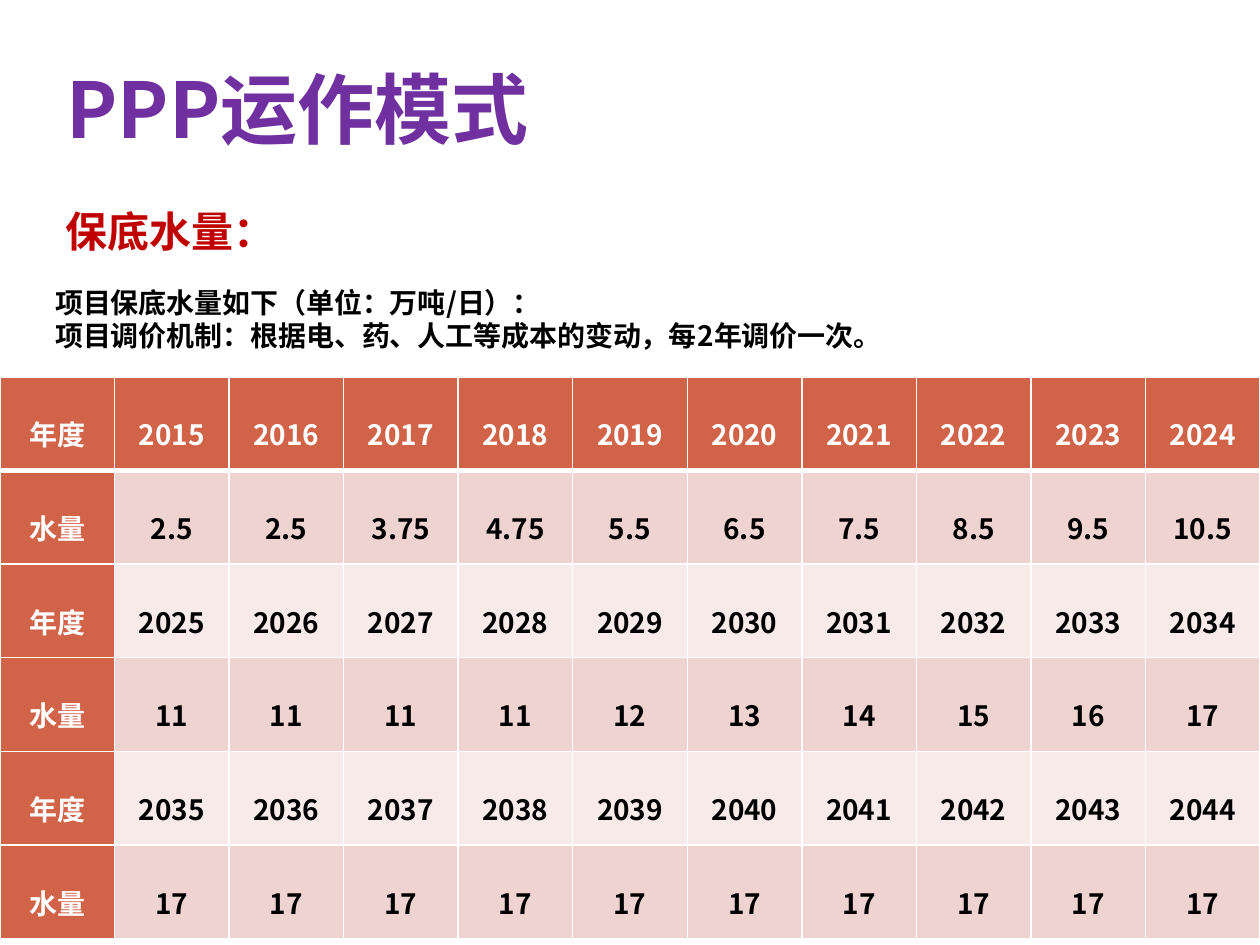
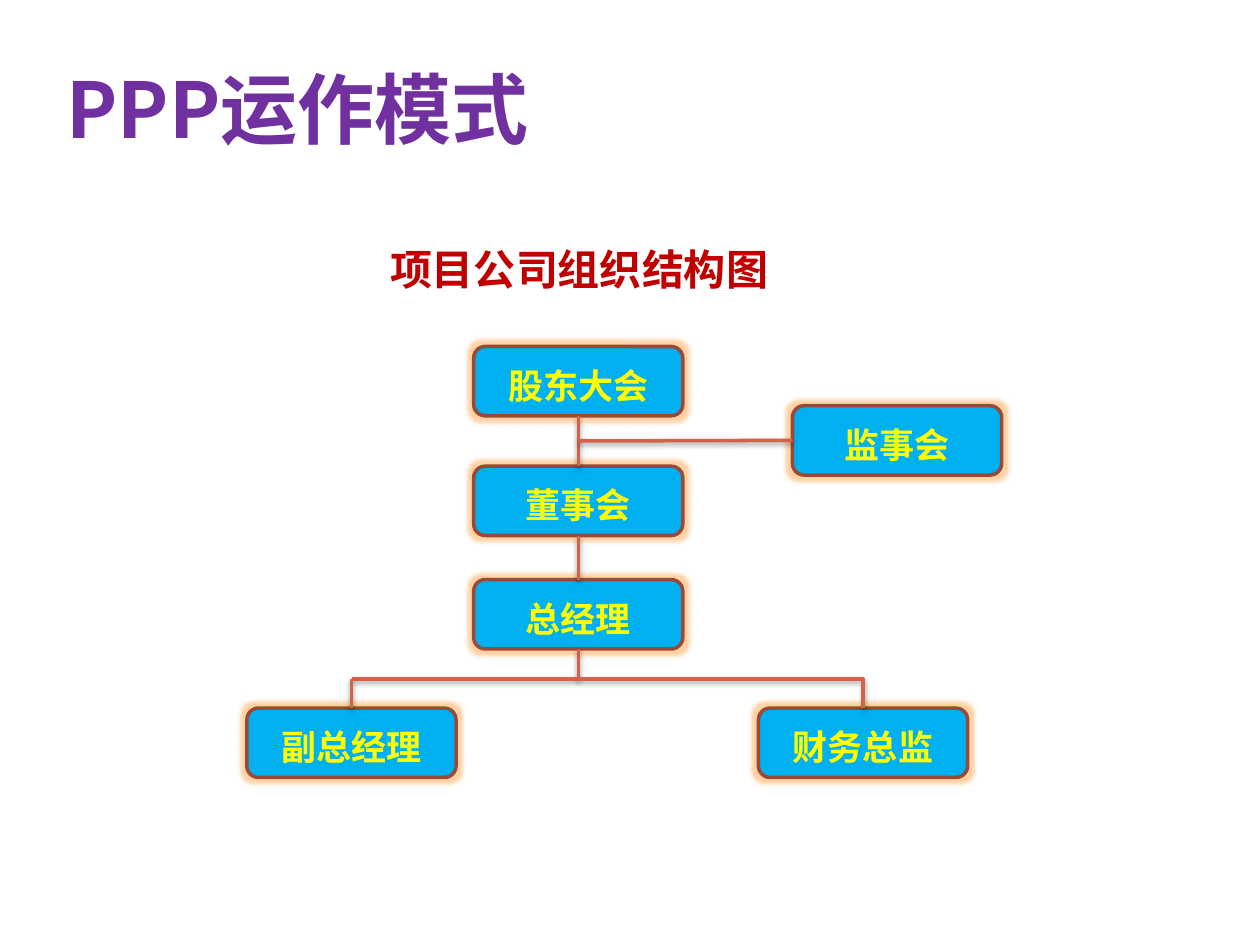
import pptx
import pptx.util
import pptx.dml.color
import pptx.enum.shapes
import pptx.enum.text
import pptx.oxml.ns
from lxml import etree

Inches, Pt = pptx.util.Inches, pptx.util.Pt
qn = pptx.oxml.ns.qn
ALIGN = pptx.enum.text.PP_ALIGN
ANCHOR = pptx.enum.text.MSO_ANCHOR
LINK = pptx.enum.shapes.MSO_CONNECTOR

FONT = "Noto Sans CJK SC"
PURPLE, RED, YELLOW = "7030A0", "C00000", "FFFF00"
WHITE, BLACK = "FFFFFF", "000000"
BRICK, BROWN, SKY, GLOW = "D16349", "9B4936", "00B0F0", "FF9933"
BANDS = ["EED3D0", "F7EAE9"]

TITLE = "PPP运作模式"
NOTES = ["项目保底水量如下（单位：万吨/日）：",
         "项目调价机制：根据电、药、人工等成本的变动，每2年调价一次。"]
FLOWS = [
    (2015, [2.5, 2.5, 3.75, 4.75, 5.5, 6.5, 7.5, 8.5, 9.5, 10.5]),
    (2025, [11, 11, 11, 11, 12, 13, 14, 15, 16, 17]),
    (2035, [17] * 10),
]
TABLE = (0, 2.99, 10, 4.46)

BOX = (1.66, 0.55)
ROLES = {
    "股东大会": (3.76, 2.75),
    "董事会": (3.76, 3.7),
    "总经理": (3.76, 4.6),
    "监事会": (6.29, 3.22),
    "副总经理": (1.96, 5.62),
    "财务总监": (6.02, 5.62),
}
MID = 4.59
FORK = 5.39
TOP, LEFT, BOTTOM = 0, 1, 2


def tint(code):
    return pptx.dml.color.RGBColor.from_string(code)


def write(para, text, size, color):
    run = para.add_run()
    run.text = text
    font = run.font
    font.size, font.bold = Pt(size), True
    font.color.rgb = tint(color)
    font.name = FONT
    etree.SubElement(font._element, qn("a:ea"), typeface=FONT)


def label(slide, at, lines, size, color, align=ALIGN.LEFT, indent=0):
    frame = slide.shapes.add_textbox(*map(Inches, at)).text_frame
    frame.word_wrap = True
    for i, text in enumerate(lines):
        para = frame.add_paragraph() if i else frame.paragraphs[0]
        para.alignment = align
        if indent:
            para._p.get_or_add_pPr().set("indent", str(Inches(indent)))
        write(para, text, size, color)
    return frame


def start(deck):
    """Add a blank slide with the shared title."""
    slide = deck.slides.add_slide(deck.slide_layouts[6])
    label(slide, (0.43, 0.44, 4.09, 0.84), [TITLE], 44, PURPLE)
    return slide


def effect(holder, tag, color, alpha, **attrs):
    """Add a glow or shadow to an effect list."""
    node = etree.SubElement(holder, qn(tag), **attrs)
    shade = etree.SubElement(node, qn("a:srgbClr"), val=color)
    etree.SubElement(shade, qn("a:alpha"), val=str(alpha * 1000))


def border(cell, side, width):
    props = cell._tc.get_or_add_tcPr()
    line = etree.Element(qn("a:ln" + side), w=str(Pt(width)))
    fill = etree.SubElement(line, qn("a:solidFill"))
    etree.SubElement(fill, qn("a:srgbClr"), val=WHITE)
    props.append(line)


def paint(cell, text, row, col):
    head = row == 0 or col == 0
    cell.margin_left = cell.margin_right = Inches(0.07)
    cell.margin_top = cell.margin_bottom = 0
    cell.vertical_anchor = ANCHOR.MIDDLE
    para = cell.text_frame.paragraphs[0]
    para.alignment, para.line_spacing = ALIGN.CENTER, 1.5
    write(para, text, 16, WHITE if head else BLACK)
    thick = {(0, "B"), (1, "T")}
    for side in "LRTB":
        border(cell, side, 3 if (row, side) in thick else 1)
    cell.fill.solid()
    cell.fill.fore_color.rgb = tint(BRICK if head else BANDS[(row - 1) % 2])


def water(deck):
    slide = start(deck)
    label(slide, (0.42, 1.58, 2.74, 0.5), ["保底水量："], 24, RED)
    rows = []
    for first, flows in FLOWS:
        rows.append(["年度", *range(first, first + len(flows))])
        rows.append(["水量", *flows])
    wide = len(rows[0])
    table = slide.shapes.add_table(len(rows), wide, *map(Inches, TABLE)).table
    for col in table.columns:
        col.width = Inches(TABLE[2] / wide)
    for r, row in enumerate(rows):
        table.rows[r].height = Inches(TABLE[3] / len(rows))
        for c, value in enumerate(row):
            paint(table.cell(r, c), str(value), r, c)
    frame = label(slide, (0.01, 2.21, 7.18, 0.64), NOTES, 16, BLACK, indent=0.33)
    frame.vertical_anchor = ANCHOR.MIDDLE


def block(slide, name, spot):
    kind = pptx.enum.shapes.MSO_SHAPE.FLOWCHART_ALTERNATE_PROCESS
    box = slide.shapes.add_shape(kind, *map(Inches, spot + BOX))
    box.fill.solid()
    box.fill.fore_color.rgb = tint(SKY)
    box.line.color.rgb = tint(BROWN)
    box.line.width = Pt(2)
    box.shadow.inherit = False
    holder = box._element.spPr.find(qn("a:effectLst"))
    effect(holder, "a:glow", GLOW, 45, rad=str(Pt(5)))
    frame = box.text_frame
    frame.margin_top, frame.margin_bottom = Inches(0.05), Inches(0.02)
    frame.vertical_anchor = ANCHOR.MIDDLE
    para = frame.paragraphs[0]
    para.alignment, para.line_spacing = ALIGN.CENTER, 1.1
    write(para, name, 20, YELLOW)
    return box


def link(slide, a, b, head=None, tail=None, kind=LINK.STRAIGHT):
    """Draw a line from a to b; head and tail are (box, side) joints."""
    line = slide.shapes.add_connector(kind, *map(Inches, a + b))
    if head:
        line.begin_connect(*head)
    if tail:
        line.end_connect(*tail)
    line.line.color.rgb = tint(BRICK)
    line.line.width = Pt(2)
    holder = etree.SubElement(line._element.spPr, qn("a:effectLst"))
    effect(holder, "a:outerShdw", BLACK, 38, blurRad=str(Pt(3.1)),
           dist=str(Pt(1.6)), dir="5400000", rotWithShape="0")
    return line


def chart(deck):
    slide = start(deck)
    label(slide, (2.7, 1.88, 3.79, 0.5), ["项目公司组织结构图"], 24, RED, ALIGN.CENTER)
    boxes = {name: block(slide, name, spot) for name, spot in ROLES.items()}
    chain = ["股东大会", "董事会", "总经理"]
    for up, down in zip(chain, chain[1:]):
        link(slide, (MID, ROLES[up][1] + BOX[1]), (MID, ROLES[down][1]),
             (boxes[up], BOTTOM), (boxes[down], TOP))
    link(slide, (6.29, 3.5), (MID, 3.5), head=(boxes["监事会"], LEFT))
    link(slide, (MID, 5.15), (MID, FORK), head=(boxes["总经理"], BOTTOM))
    west, east = (ROLES[name][0] + BOX[0] / 2 for name in ("副总经理", "财务总监"))
    floor = ROLES["副总经理"][1]
    bend = link(slide, (west, FORK), (east, floor), kind=LINK.ELBOW)
    bend._element.spPr.find(qn("a:prstGeom")).set("prst", "bentConnector2")
    link(slide, (west, FORK), (west, floor), tail=(boxes["副总经理"], TOP))


def main():
    deck = pptx.Presentation()
    deck.slide_width, deck.slide_height = Inches(10), Inches(7.5)
    water(deck)
    chart(deck)
    deck.save("out.pptx")


if __name__ == "__main__":
    main()
